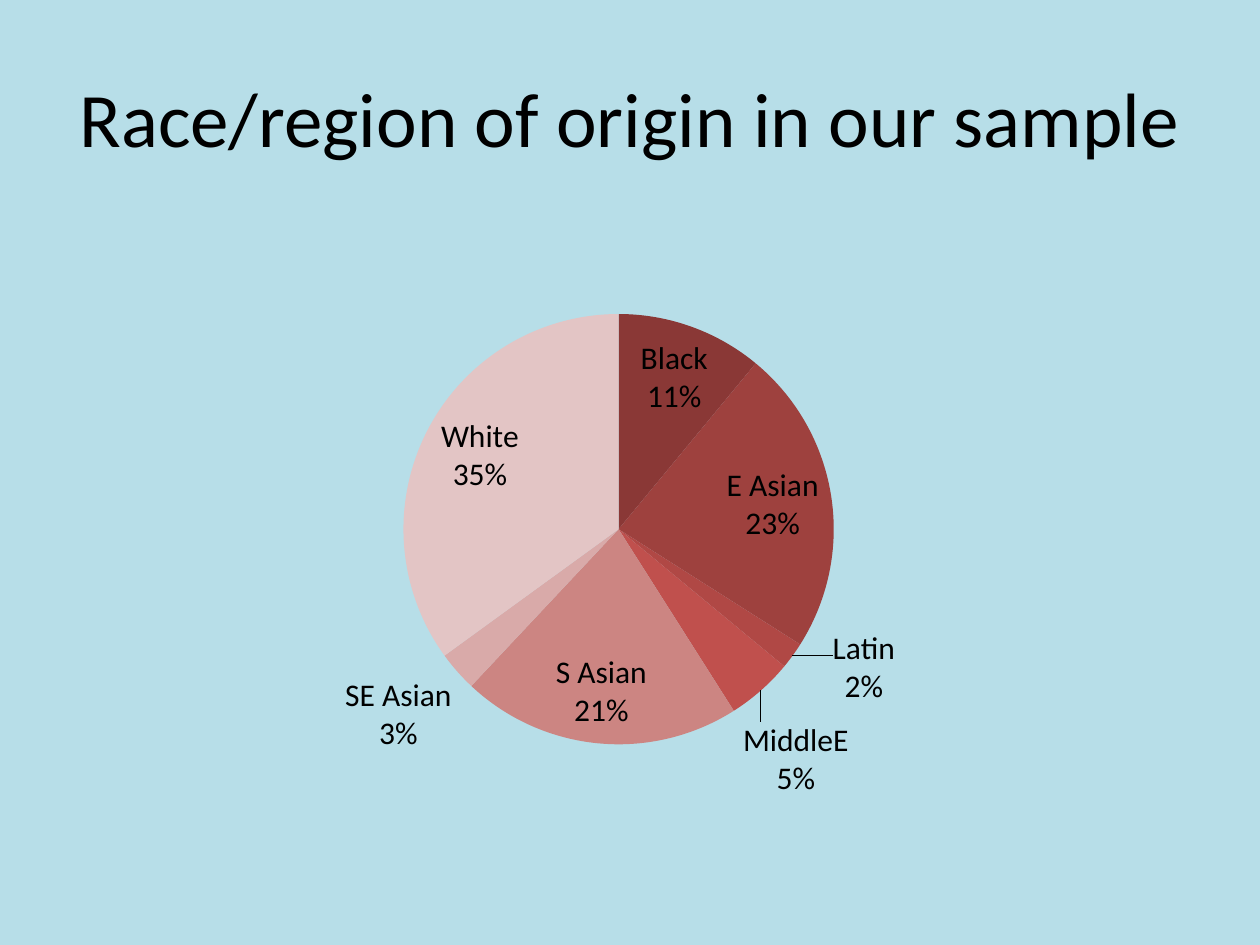
import pptx
import pptx.chart.data
import pptx.dml.color
import pptx.enum.chart
import pptx.enum.text
import pptx.oxml
import pptx.oxml.ns
import pptx.util
from pptx.util import Inches

RGBColor = pptx.dml.color.RGBColor
BACKGROUND = RGBColor(0xB7, 0xDE, 0xE8)
BLACK = RGBColor(0, 0, 0)
FONT = "Calibri"
BEST_FIT = pptx.enum.chart.XL_LABEL_POSITION.BEST_FIT
OUTSIDE = pptx.enum.chart.XL_LABEL_POSITION.OUTSIDE_END

# Region, percent, slice colour, label position, label shift (share of the chart)
REGIONS = [
    ("Black", 11, RGBColor(0x8A, 0x38, 0x36), BEST_FIT, None),
    ("E Asian", 23, RGBColor(0x9E, 0x41, 0x3E), BEST_FIT, None),
    ("Latin", 2, RGBColor(0xB0, 0x48, 0x45), OUTSIDE, (0.03, -0.05)),
    ("MiddleE", 5, RGBColor(0xC0, 0x50, 0x4D), OUTSIDE, (-0.02, 0.04)),
    ("S Asian", 21, RGBColor(0xCC, 0x85, 0x82), BEST_FIT, None),
    ("SE Asian", 3, RGBColor(0xD9, 0xAA, 0xA9), OUTSIDE, None),
    ("White", 35, RGBColor(0xE3, 0xC5, 0xC5), BEST_FIT, None),
]


def write_text(frame, text, *, size, color=BLACK, font=FONT,
               align=pptx.enum.text.PP_ALIGN.CENTER):
    paragraph = frame.paragraphs[0]
    paragraph.alignment = align
    run = paragraph.add_run()
    run.text = text
    run.font.name = font
    run.font.size = pptx.util.Pt(size)
    run.font.color.rgb = color


def manual_layout(**settings):
    """Return a c:layout element holding the given manual settings in order."""
    values = "".join(f'<c:{key} val="{value}"/>' for key, value in settings.items())
    return pptx.oxml.parse_xml(
        f'<c:layout {pptx.oxml.ns.nsdecls("c")}>'
        f"<c:manualLayout>{values}</c:manualLayout></c:layout>")


presentation = pptx.Presentation()
presentation.slide_width = Inches(10)
presentation.slide_height = Inches(7.5)
slide = presentation.slides.add_slide(presentation.slide_layouts[5])
slide.background.fill.solid()
slide.background.fill.fore_color.rgb = BACKGROUND

title = slide.shapes.title
title.left, title.top = Inches(0.5), Inches(0.3)
title.width, title.height = Inches(9), Inches(1.25)
title.text_frame.vertical_anchor = pptx.enum.text.MSO_ANCHOR.MIDDLE
write_text(title.text_frame, "Race/region of origin in our sample", size=44)

sample = pptx.chart.data.CategoryChartData()
sample.categories = [region[0] for region in REGIONS]
sample.add_series("Series 1", [region[1] for region in REGIONS])
pie = slide.shapes.add_chart(
    pptx.enum.chart.XL_CHART_TYPE.PIE,
    Inches(0.5), Inches(1.75), Inches(9), Inches(4.95), sample).chart
pie.has_title = False
pie.has_legend = False
pie.font.name = FONT
pie.font.size = pptx.util.Pt(18)
pie.font.color.rgb = BLACK

plot_area = pie.plots[0]._element.getparent()
for old_layout in plot_area.findall(pptx.oxml.ns.qn("c:layout")):
    plot_area.remove(old_layout)
plot_area.insert(0, manual_layout(
    layoutTarget="inner", xMode="edge", yMode="edge", x=0.3, y=0.15, w=0.38, h=0.69))

pie.plots[0].vary_by_categories = True
shares = pie.plots[0].series[0]
shares.data_labels.show_value = False
shares.data_labels.show_category_name = True
shares.data_labels.show_percentage = True

for index, (region, percent, color, position, shift) in enumerate(REGIONS):
    point = shares.points[index]
    point.format.fill.solid()
    point.format.fill.fore_color.rgb = color
    point.format.line.fill.background()
    point.data_label.position = position

for label, region in zip(shares._element.iter(pptx.oxml.ns.qn("c:dLbl")), REGIONS):
    for flag, value in (("showVal", "0"), ("showCatName", "1"), ("showPercent", "1")):
        label.find(pptx.oxml.ns.qn(f"c:{flag}")).set("val", value)
    label.append(pptx.oxml.parse_xml(
        f'<c:separator {pptx.oxml.ns.nsdecls("c")}>\n</c:separator>'))
    shift = region[-1]
    if shift:
        label.insert(1, manual_layout(x=shift[0], y=shift[1]))

presentation.save("out.pptx")
